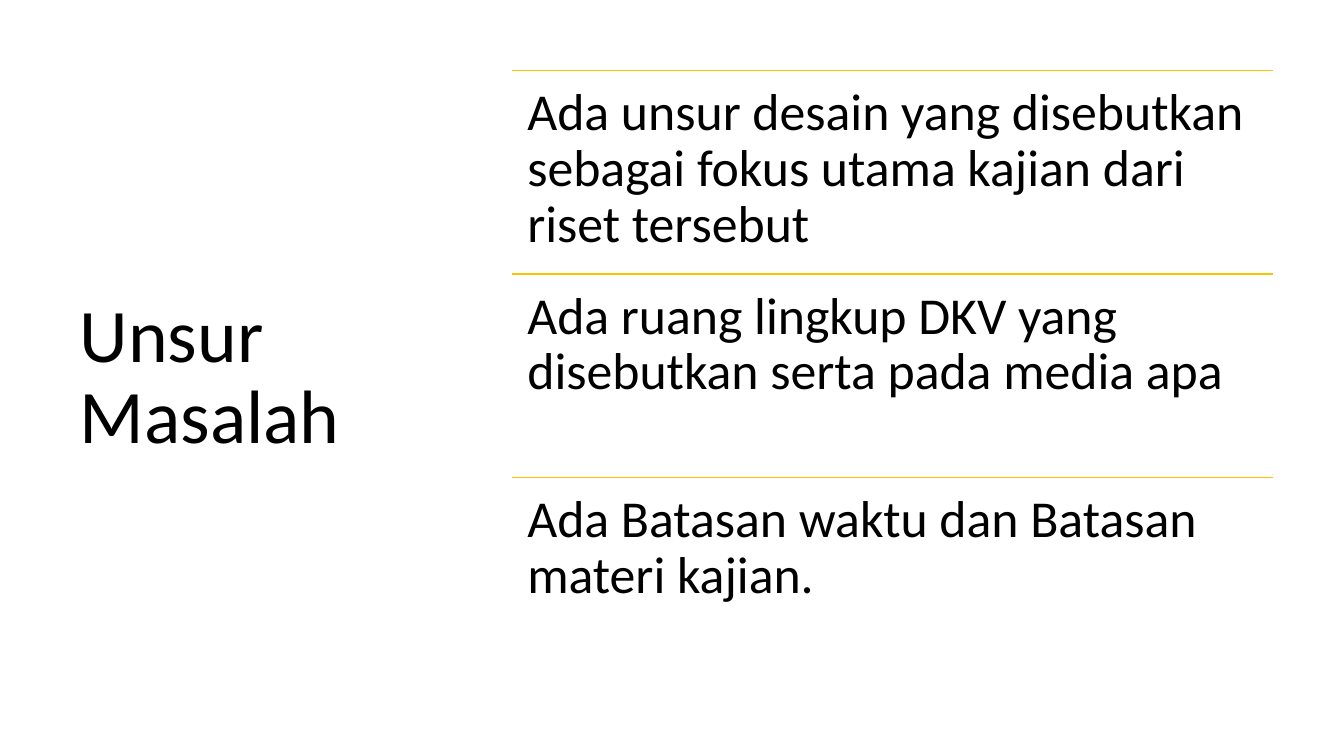
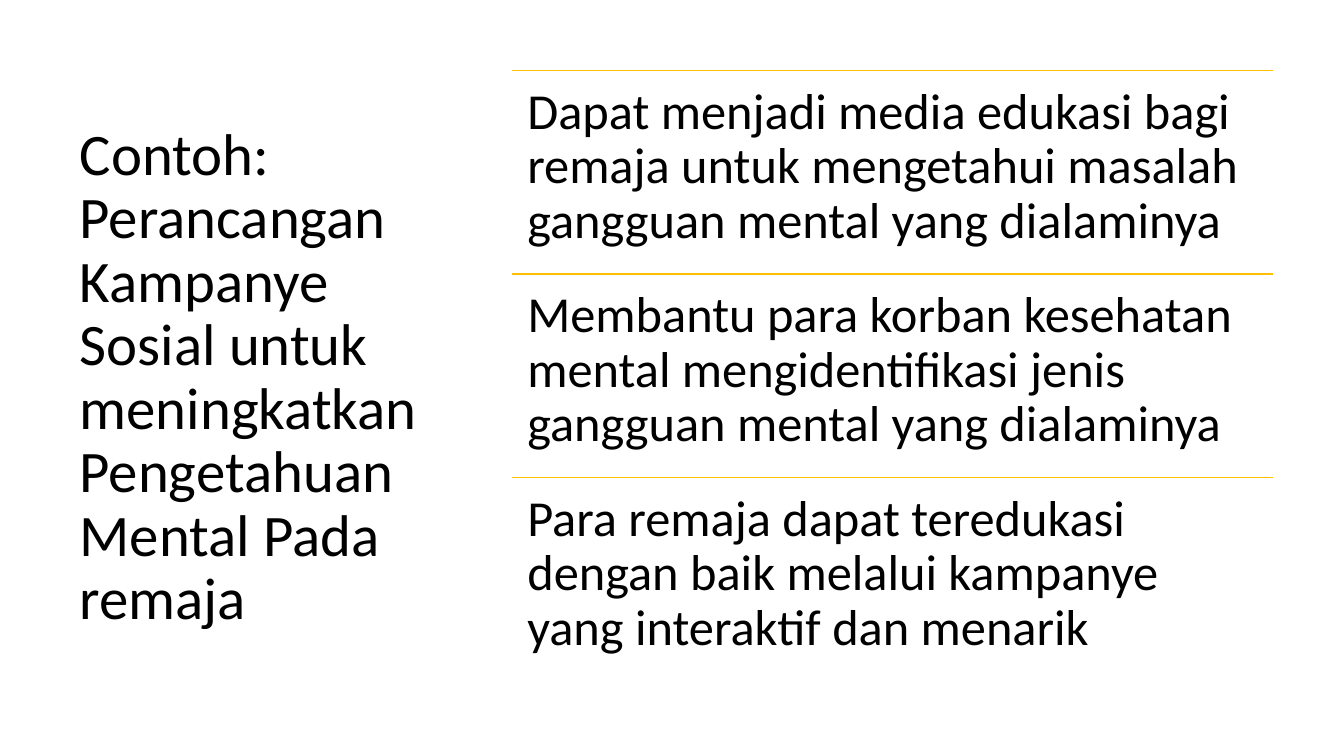
from lxml.etree import SubElement
from pptx import Presentation
from pptx.dml.color import RGBColor
from pptx.enum.shapes import MSO_CONNECTOR
from pptx.enum.text import MSO_ANCHOR, MSO_AUTO_SIZE, PP_ALIGN
from pptx.oxml.ns import qn
from pptx.util import Inches, Pt

TITLE_ONLY = 5


def color(hex_string):
    return RGBColor.from_string(hex_string)


class Deck:
    FONT = "Calibri"
    INK = "000000"
    RULE = "FFC000"
    TOP = 0.7
    TITLE_LEFT, TITLE_WIDTH, TITLE_HEIGHT = 0.69, 3.74, 6.11
    LIST_LEFT, LIST_WIDTH, ROW_HEIGHT = 5.08, 7.55, 2.02
    ROW_INSET = 0.15

    def __init__(self):
        self.prs = Presentation()
        self.prs.slide_width = Inches(13.33)
        self.prs.slide_height = Inches(7.5)
        self.s = None

    def new_slide(self):
        layout = self.prs.slide_layouts[TITLE_ONLY]
        self.s = self.prs.slides.add_slide(layout)

    def set_text(self, tf, text, size, anchor):
        tf.text = text
        tf.word_wrap = True
        tf.auto_size = MSO_AUTO_SIZE.NONE
        tf.vertical_anchor = anchor
        p = tf.paragraphs[0]
        p.alignment = PP_ALIGN.LEFT
        p.line_spacing = 0.9
        font = p.runs[0].font
        font.name = self.FONT
        font.size = Pt(size)
        font.color.rgb = color(self.INK)

    def title(self, text, size):
        sp = self.s.shapes.title
        sp.left, sp.top = Inches(self.TITLE_LEFT), Inches(self.TOP)
        sp.width, sp.height = Inches(self.TITLE_WIDTH), Inches(self.TITLE_HEIGHT)
        self.set_text(sp.text_frame, text, size, MSO_ANCHOR.MIDDLE)

    def rule(self, y):
        left, right = Inches(self.LIST_LEFT), Inches(self.LIST_LEFT + self.LIST_WIDTH)
        line = self.s.shapes.add_connector(
            MSO_CONNECTOR.STRAIGHT, left, Inches(y), right, Inches(y))
        line.line.color.rgb = color(self.RULE)
        line.line.width = Pt(1)
        SubElement(line._element.spPr, qn("a:effectLst"))

    def row(self, y, text, size):
        sp = self.s.shapes.add_textbox(
            Inches(self.LIST_LEFT), Inches(y),
            Inches(self.LIST_WIDTH), Inches(self.ROW_HEIGHT))
        tf = sp.text_frame
        tf.margin_left = tf.margin_right = Inches(self.ROW_INSET)
        tf.margin_top = tf.margin_bottom = Inches(self.ROW_INSET)
        self.set_text(tf, text, size, MSO_ANCHOR.TOP)

    def ruled_list(self, texts, size):
        """Stack equal rows, each under its own rule."""
        for i, text in enumerate(texts):
            y = self.TOP + i * self.ROW_HEIGHT
            self.rule(y)
            self.row(y, text, size)


SLIDES = [
    ("Unsur Masalah", 54, 37, [
        "Ada unsur desain yang disebutkan sebagai fokus utama kajian dari riset tersebut",
        "Ada ruang lingkup DKV yang disebutkan serta pada media apa",
        "Ada Batasan waktu dan Batasan materi kajian.",
    ]),
    ("Contoh: Perancangan Kampanye Sosial untuk meningkatkan "
     "Pengetahuan Mental Pada remaja", 42, 36, [
        "Dapat menjadi media edukasi bagi remaja untuk mengetahui masalah "
        "gangguan mental yang dialaminya",
        "Membantu para korban kesehatan mental mengidentifikasi jenis "
        "gangguan mental yang dialaminya",
        "Para remaja dapat teredukasi dengan baik melalui kampanye "
        "yang interaktif dan menarik",
    ]),
]


def main():
    deck = Deck()
    for title, title_size, row_size, rows in SLIDES:
        deck.new_slide()
        deck.title(title, title_size)
        deck.ruled_list(rows, row_size)
    deck.prs.save("out.pptx")


if __name__ == "__main__":
    main()
